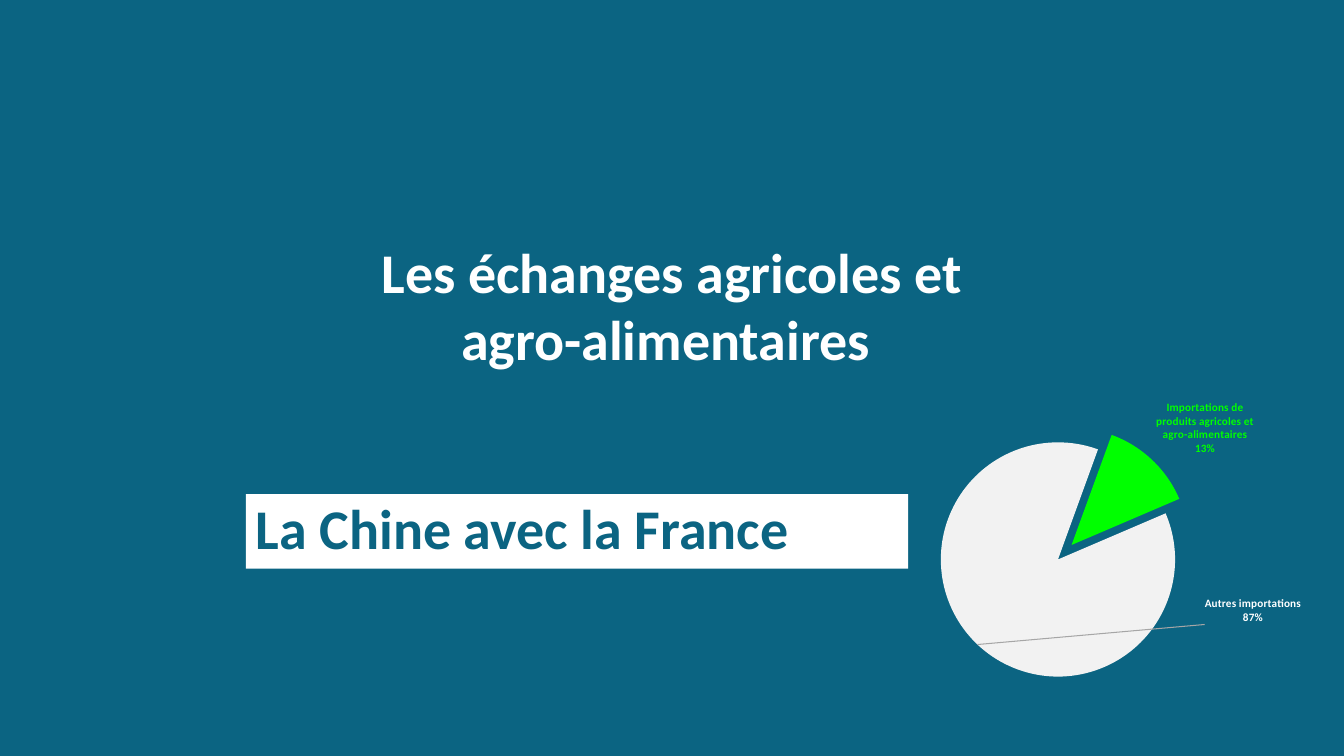
from dataclasses import dataclass

from lxml.etree import SubElement
from pptx import Presentation
from pptx.chart.data import CategoryChartData
from pptx.dml.color import RGBColor
from pptx.enum.chart import XL_CHART_TYPE, XL_LABEL_POSITION
from pptx.enum.shapes import MSO_SHAPE
from pptx.enum.text import MSO_ANCHOR, PP_ALIGN
from pptx.oxml import parse_xml
from pptx.oxml.ns import nsdecls, qn
from pptx.util import Cm, Pt


@dataclass(frozen=True)
class Theme:
    font: str = "Calibri"
    teal: RGBColor = RGBColor(0x0B, 0x64, 0x82)
    white: RGBColor = RGBColor(0xFF, 0xFF, 0xFF)
    green: RGBColor = RGBColor(0x00, 0xFF, 0x00)
    pale: RGBColor = RGBColor(0xF2, 0xF2, 0xF2)
    dark: RGBColor = RGBColor(0x40, 0x40, 0x40)
    leader: RGBColor = RGBColor(0xA6, 0xA6, 0xA6)
    heading: Pt = Pt(40)
    label: Pt = Pt(8)


THEME = Theme()


def set_font(font, size, color):
    style = {"name": THEME.font, "size": size, "bold": True}
    for key, value in style.items():
        setattr(font, key, value)
    font.color.rgb = color


def write_heading(holder, text, color, anchor, paragraph_format):
    frame = holder.text_frame
    frame.word_wrap = True
    frame.vertical_anchor = anchor
    paragraph = frame.paragraphs[0]
    for key, value in paragraph_format.items():
        setattr(paragraph, key, value)
    run = paragraph.add_run()
    run.text = text
    set_font(run.font, THEME.heading, color)


def add_title(slide, text, box):
    title = slide.shapes.add_textbox(*box)
    write_heading(title, text, THEME.white, MSO_ANCHOR.TOP, {"alignment": PP_ALIGN.CENTER})


def add_banner(slide, text, box):
    banner = slide.shapes.add_shape(MSO_SHAPE.RECTANGLE, *box)
    banner.shadow.inherit = False
    banner.fill.solid()
    banner.fill.fore_color.rgb = THEME.white
    banner.line.fill.background()
    write_heading(banner, text, THEME.teal, MSO_ANCHOR.MIDDLE,
                  {"alignment": PP_ALIGN.LEFT, "line_spacing": 0.9})


def manual_layout(**values):
    """Return a chart layout holding the given fractions of the chart size."""
    layout = parse_xml(f"<c:layout {nsdecls('c')}><c:manualLayout/></c:layout>")
    for key, value in values.items():
        SubElement(layout[0], qn(f"c:{key}")).set("val", str(value))
    return layout


def label_slice(series, index, lines, color, shift):
    label = series.points[index].data_label
    frame = label.text_frame
    frame.text = "\n".join(lines)
    for paragraph in frame.paragraphs:
        for run in paragraph.runs:
            set_font(run.font, THEME.label, color)
    label.position = XL_LABEL_POSITION.OUTSIDE_END
    element = series.data_labels._element.findall(qn("c:dLbl"))[index]
    element.find(qn("c:showCatName")).set("val", "1")
    if shift:
        element.find(qn("c:idx")).addnext(manual_layout(x=shift[0], y=shift[1]))


def format_labels(labels):
    options = {"show_value": True, "show_category_name": True, "number_format": "0%",
               "number_format_is_linked": False, "position": XL_LABEL_POSITION.OUTSIDE_END}
    for key, value in options.items():
        setattr(labels, key, value)
    set_font(labels.font, THEME.label, THEME.dark)
    leader_lines = parse_xml(
        f'<c:leaderLines {nsdecls("c", "a")}><c:spPr><a:ln w="9525"><a:solidFill>'
        f'<a:srgbClr val="{THEME.leader}"/></a:solidFill></a:ln></c:spPr></c:leaderLines>')
    labels._element.find(qn("c:showLeaderLines")).addnext(leader_lines)


def add_import_pie(slide, slices, box):
    data = CategoryChartData(number_format="0%")
    data.categories = [part["category"] for part in slices]
    data.add_series("Series 1", [part["share"] for part in slices])
    chart = slide.shapes.add_chart(XL_CHART_TYPE.PIE, *box, data).chart
    chart.has_legend = False
    chart.has_title = False
    set_font(chart.font, THEME.label, THEME.white)

    plot = chart.plots[0]
    plot.vary_by_categories = False
    pie = plot._element
    SubElement(pie, qn("c:firstSliceAng")).set("val", "20")
    plot_area = pie.getparent()
    for automatic in plot_area.findall(qn("c:layout")):
        plot_area.remove(automatic)
    plot_area.insert(0, manual_layout(layoutTarget="inner", xMode="edge", yMode="edge",
                                      x=0.29, y=0.21, w=0.4, h=0.68))

    series = plot.series[0]
    for index, part in enumerate(slices):
        point = series.points[index]
        point.format.fill.solid()
        point.format.fill.fore_color.rgb = part["fill"]
        point.format.line.fill.background()
        label_slice(series, index, part["label"], part["ink"], part["shift"])
    format_labels(series.data_labels)
    detached = series._element.find(qn("c:dPt"))
    explosion = parse_xml(f'<c:explosion {nsdecls("c")} val="17"/>')
    detached.find(qn("c:spPr")).addprevious(explosion)


def main():
    deck = Presentation()
    deck.slide_width, deck.slide_height = Cm(33.87), Cm(19.05)
    slide = deck.slides.add_slide(deck.slide_layouts[6])
    slide.background.fill.solid()
    slide.background.fill.fore_color.rgb = THEME.teal

    add_title(slide, "Les échanges agricoles et agro-alimentaires ",
              (Cm(8.46), Cm(5.86), Cm(16.94), Cm(3.68)))
    add_banner(slide, "La Chine avec la France",
               (Cm(6.2), Cm(12.45), Cm(16.69), Cm(1.88)))
    slices = [
        {"category": "Produits agricoles et agro-alimentaires", "share": 0.13,
         "label": ["Importations de produits agricoles et agro-alimentaires", "13%"],
         "fill": THEME.green, "ink": THEME.green, "shift": None},
        {"category": "Autres", "share": 0.87,
         "label": ["Autres importations", "87%"],
         "fill": THEME.pale, "ink": THEME.white, "shift": (0.56, -0.15)},
    ]
    add_import_pie(slide, slices, (Cm(19.43), Cm(9.32), Cm(14.76), Cm(8.69)))
    deck.save("out.pptx")


if __name__ == "__main__":
    main()
